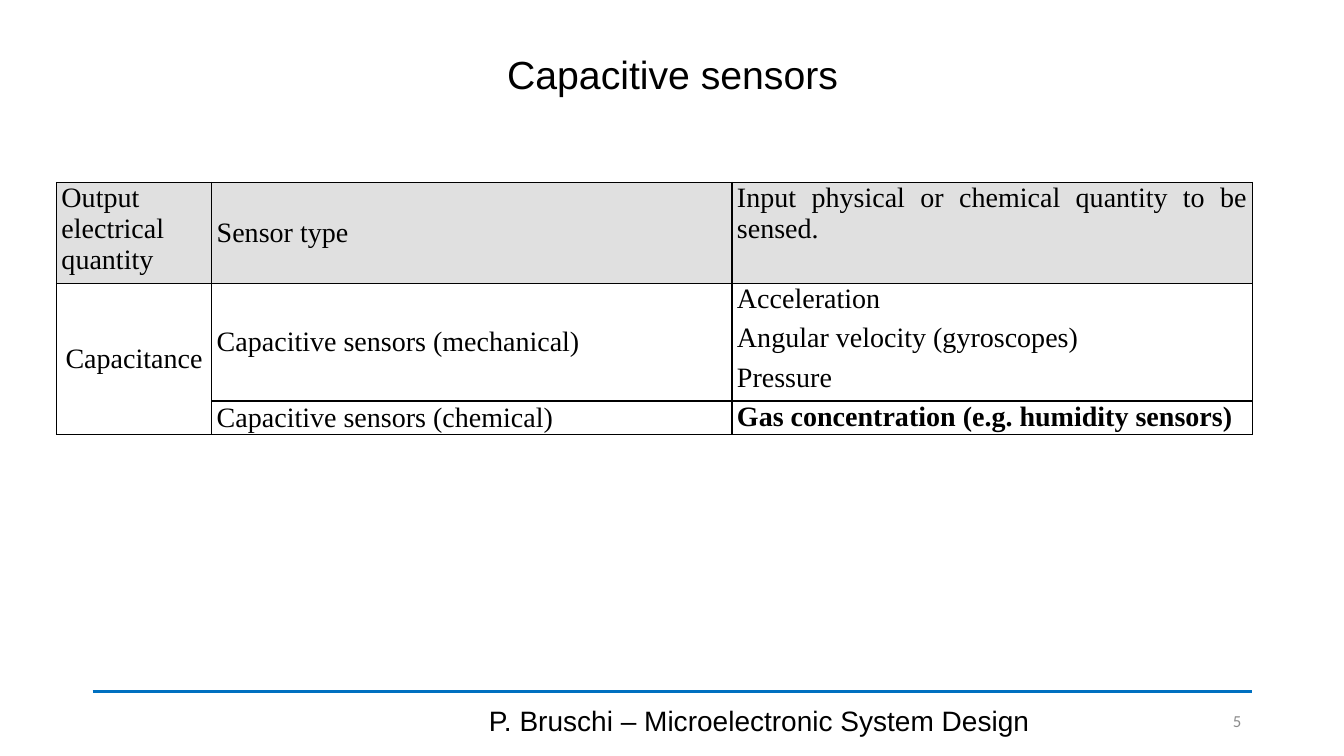
import pptx
import pptx.util
import pptx.dml.color
import pptx.enum.text
import pptx.enum.shapes
import pptx.oxml
import pptx.oxml.ns
from dataclasses import dataclass

Inches, Pt = pptx.util.Inches, pptx.util.Pt
ALIGN = pptx.enum.text.PP_ALIGN
MIDDLE = pptx.enum.text.MSO_ANCHOR.MIDDLE
TOP = pptx.enum.text.MSO_ANCHOR.TOP

# Content
TITLE = "Capacitive sensors"
FOOTER = "P. Bruschi – Microelectronic System Design"
NUMBER = "5"
ROWS = [
    [["Output electrical quantity"], ["Sensor type"],
     ["Input physical or chemical quantity to be sensed. "]],
    [["Capacitance"], ["Capacitive sensors (mechanical)"],
     ["Acceleration", "Angular velocity (gyroscopes)", "Pressure"]],
    [[], ["Capacitive sensors (chemical)"],
     ["Gas concentration (e.g. humidity sensors)"]],
]
WIDTHS = [1.54, 5.16, 5.16]
HEIGHTS = [0.93, 1.09, 0.3]


@dataclass
class Theme:
    black: str = "000000"
    white: str = "FFFFFF"
    head: str = "E0E0E0"
    rule: str = "0070C0"
    gray: str = "8C8C8C"
    sans: str = "Arial"
    serif: str = "Times New Roman"
    small: str = "Calibri"
    big: int = 28
    body: int = 20
    tiny: int = 12


theme = Theme()


def color(code):
    return pptx.dml.color.RGBColor.from_string(code)


def write(frame, lines, font=theme.sans, size=theme.body, ink=theme.black,
          align=ALIGN.CENTER, bold=False, after=0, space=None):
    """Fill a text frame, one paragraph a line."""
    frame.word_wrap = True
    for i, line in enumerate(lines):
        para = frame.paragraphs[0] if i == 0 else frame.add_paragraph()
        para.alignment = align
        para.space_after = Pt(after)
        para.line_spacing = space
        run = para.add_run()
        run.text = line
        run.font.name, run.font.size, run.font.bold = font, Pt(size), bold
        run.font.color.rgb = color(ink)


def label(slide, box, text, **style):
    frame = slide.shapes.add_textbox(*map(Inches, box)).text_frame
    frame.vertical_anchor = MIDDLE
    write(frame, [text], **style)


def border(cell):
    props = cell._tc.get_or_add_tcPr()
    for i, side in enumerate(("lnL", "lnR", "lnT", "lnB")):
        props.insert(i, pptx.oxml.parse_xml(
            f'<a:{side} {pptx.oxml.ns.nsdecls("a")} w="{Pt(1)}"><a:solidFill>'
            f'<a:srgbClr val="{theme.black}"/></a:solidFill></a:{side}>'))


def add_grid(slide):
    shape = slide.shapes.add_table(
        len(ROWS), len(WIDTHS), Inches(0.56), Inches(1.81),
        Inches(sum(WIDTHS)), Inches(sum(HEIGHTS)))
    table = shape.table
    table.first_row = table.horz_banding = False
    for col, width in zip(table.columns, WIDTHS):
        col.width = Inches(width)
    for row, height in zip(table.rows, HEIGHTS):
        row.height = Inches(height)
    table.cell(1, 0).merge(table.cell(2, 0))

    for r, row in enumerate(ROWS):
        for c, lines in enumerate(row):
            cell = table.cell(r, c)
            cell.margin_left = cell.margin_right = Inches(0.05)
            cell.margin_top = cell.margin_bottom = 0
            cell.fill.solid()
            cell.fill.fore_color.rgb = color(theme.white if r else theme.head)
            border(cell)
            middle = c == 1 or (c == 0 and r > 0)
            cell.vertical_anchor = MIDDLE if middle else TOP
            write(cell.text_frame, lines, font=theme.serif, after=6,
                  align=ALIGN.CENTER if r and c == 0 else ALIGN.JUSTIFY,
                  bold=(r, c) == (2, 2))


def main():
    deck = pptx.Presentation()
    deck.slide_width, deck.slide_height = Inches(13.33), Inches(7.5)
    slide = deck.slides.add_slide(deck.slide_layouts[5])

    # Footer rule
    rule = slide.shapes.add_connector(
        pptx.enum.shapes.MSO_CONNECTOR.STRAIGHT,
        Inches(0.92), Inches(6.86), Inches(12.42), Inches(6.86))
    rule.line.color.rgb = color(theme.rule)
    rule.line.width = Pt(2.75)
    rule._element.spPr.append(pptx.oxml.parse_xml(
        f'<a:effectLst {pptx.oxml.ns.nsdecls("a")}/>'))

    # Title
    title = slide.shapes.title
    title.left, title.top = Inches(0.92), Inches(0.4)
    title.width, title.height = Inches(11.5), Inches(0.72)
    title.text_frame.vertical_anchor = MIDDLE
    write(title.text_frame, [TITLE], size=theme.big, space=0.9)

    # Footer text and page number
    label(slide, (4.42, 6.95, 6.22, 0.4), FOOTER)
    label(slide, (11.45, 6.95, 0.96, 0.4), NUMBER, font=theme.small,
          size=theme.tiny, ink=theme.gray, align=ALIGN.RIGHT)

    # Sensor table
    add_grid(slide)
    deck.save("out.pptx")


if __name__ == "__main__":
    main()
